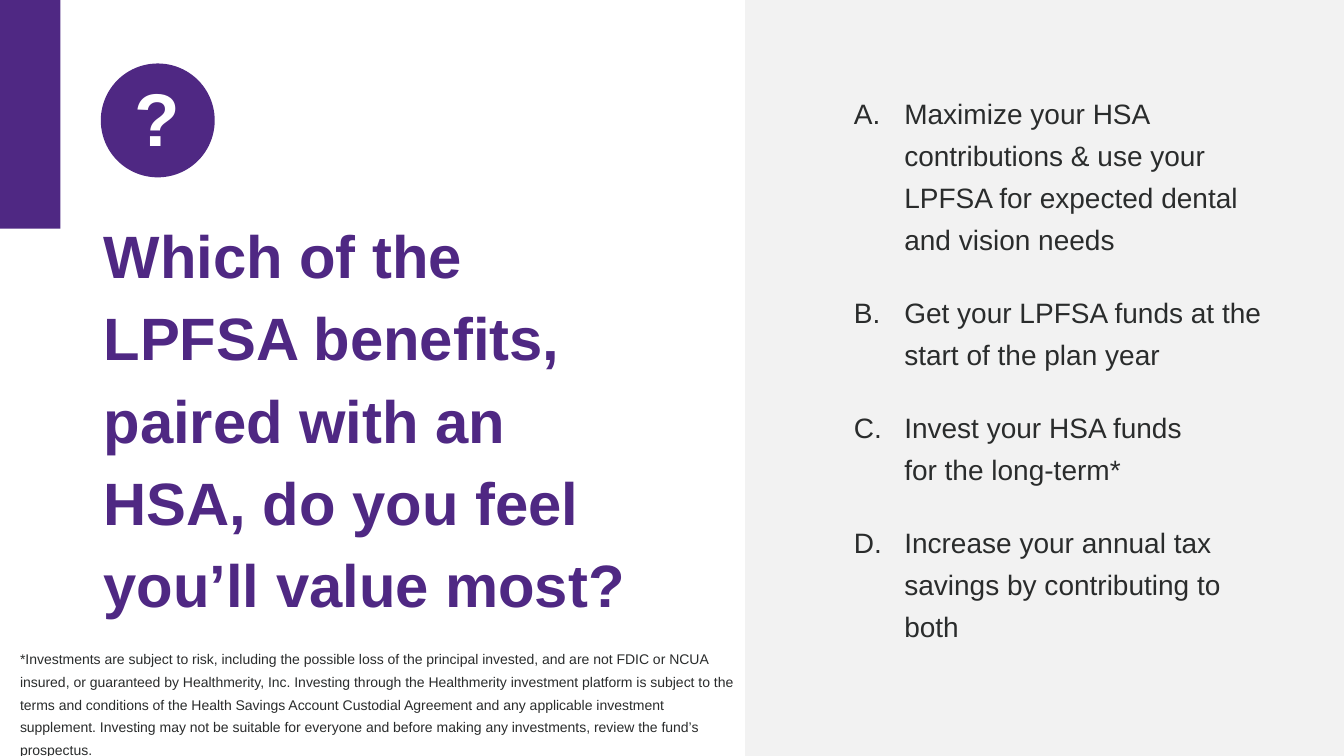
from lxml import etree
from pptx import Presentation
from pptx import util as u
from pptx.dml.color import RGBColor
from pptx.enum import shapes, text
from pptx.oxml import ns

PURPLE = RGBColor(0x4F, 0x28, 0x83)
GREY = RGBColor(0xF2, 0xF2, 0xF2)
INK = RGBColor(0x2A, 0x2C, 0x2C)
WHITE = RGBColor(0xFF, 0xFF, 0xFF)

QUESTION = ("Which of the LPFSA benefits, paired with an HSA, "
            "do you feel you’ll value most?")
ANSWERS = [
    "Maximize your HSA contributions & use your LPFSA for expected dental and vision needs",
    "Get your LPFSA funds at the start of the plan year",
    "Invest your HSA funds \vfor the long-term*",
    "Increase your annual tax savings by contributing to both",
]
DISCLAIMER = (
    "*Investments are subject to risk, including the possible loss of the principal "
    "invested, and are not FDIC or NCUA insured, or guaranteed by Healthmerity, Inc. "
    "Investing through the Healthmerity investment platform is subject to the terms and "
    "conditions of the Health Savings Account Custodial Agreement and any applicable "
    "investment supplement. Investing may not be suitable for everyone and before making "
    "any investments, review the fund’s prospectus."
)


def add_block(page, kind, area, color):
    """Add a flat shape without outline."""
    block = page.shapes.add_shape(kind, *map(u.Inches, area))
    block.shadow.inherit = False
    block.fill.solid()
    block.fill.fore_color.rgb = color
    block.line.fill.background()


def add_letter(para):
    """Give a paragraph a hanging A., B., C. number."""
    props = para._p.get_or_add_pPr()
    props.set("marL", str(u.Inches(0.5)))
    props.set("indent", str(u.Inches(-0.51)))
    etree.SubElement(props, ns.qn("a:buFont"), typeface="+mj-lt")
    etree.SubElement(props, ns.qn("a:buAutoNum"), type="alphaUcPeriod")


def add_text(page, area, lines, size, color, layout, bold=False, lettered=False):
    """Add a wrapped text box; layout holds paragraph format values."""
    box = page.shapes.add_textbox(*map(u.Inches, area))
    frame = box.text_frame
    frame.word_wrap = True
    font = {"name": "Arial", "size": u.Pt(size), "bold": bold}
    for number, line in enumerate(lines):
        para = frame.add_paragraph() if number else frame.paragraphs[0]
        para.text = line
        for name, value in layout.items():
            setattr(para, name, value)
        if lettered:
            add_letter(para)
        for span in para.runs:
            for name, value in font.items():
                setattr(span.font, name, value)
            span.font.color.rgb = color


def main():
    deck = Presentation()
    deck.slide_width, deck.slide_height = u.Inches(13.33), u.Inches(7.5)
    page = deck.slides.add_slide(deck.slide_layouts[6])

    # Side bar and answer panel
    add_block(page, shapes.MSO_SHAPE.RECTANGLE, (0, 0, 0.6, 2.27), PURPLE)
    add_block(page, shapes.MSO_SHAPE.RECTANGLE, (7.39, 0, 5.94, 7.5), GREY)

    # Question badge
    add_block(page, shapes.MSO_SHAPE.OVAL, (1, 0.63, 1.13, 1.13), PURPLE)
    add_text(page, (1, 0.91, 1.13, 0.76), ["?"], 53.3, WHITE,
             {"alignment": text.PP_ALIGN.CENTER, "line_spacing": u.Pt(46.1)}, bold=True)

    # Answers
    add_text(page, (8.37, 0.83, 4.35, 5.43), ANSWERS, 20, INK,
             {"line_spacing": 1.25, "space_after": u.Pt(22)}, lettered=True)

    # Question and disclaimer
    add_text(page, (0.93, 2.01, 5.57, 4.58), [QUESTION], 42.7, PURPLE,
             {"line_spacing": 1.15}, bold=True)
    add_text(page, (0.1, 6.35, 7.29, 1.17), [DISCLAIMER], 10, INK,
             {"line_spacing": 1.35, "space_after": u.Pt(6)})

    deck.save("out.pptx")


if __name__ == "__main__":
    main()
